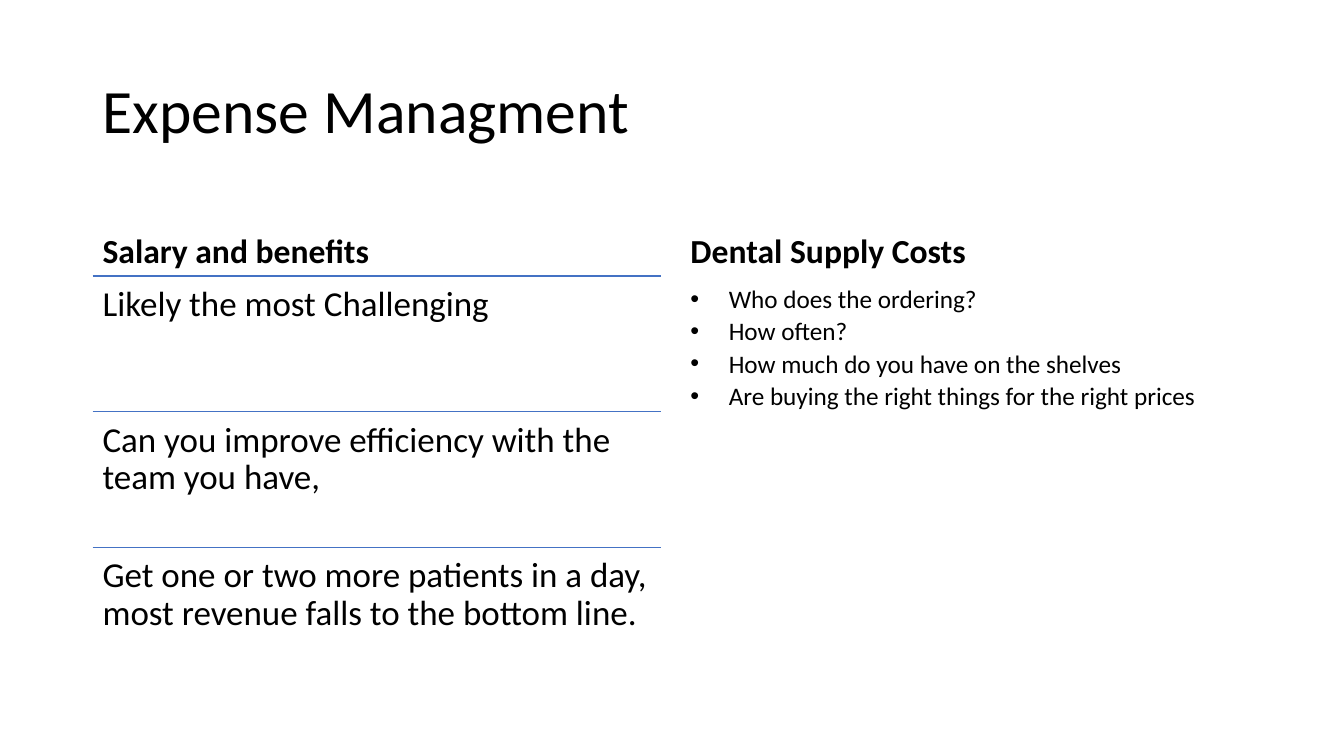
"""Build the expense management slide."""
from dataclasses import dataclass

from lxml.etree import SubElement
from pptx import Presentation
from pptx.dml.color import RGBColor
from pptx.enum.shapes import MSO_CONNECTOR
from pptx.enum.text import MSO_ANCHOR, MSO_AUTO_SIZE, PP_ALIGN
from pptx.oxml.ns import qn
from pptx.util import Inches, Pt


@dataclass(frozen=True)
class Theme:
    """Colours, font and type sizes."""
    ink: RGBColor = RGBColor(0x00, 0x00, 0x00)
    rule: RGBColor = RGBColor(0x44, 0x72, 0xC4)
    font: str = "Calibri"
    title: int = 44
    heading: int = 24
    step: int = 25
    question: int = 18


class SlideBuilder:
    """Draws on one slide, with lengths in percent of its size."""

    def __init__(self, deck, theme):
        """Add a title-only slide to the deck."""
        self.width, self.height = deck.slide_width, deck.slide_height
        self.theme = theme
        self.slide = deck.slides.add_slide(deck.slide_layouts[5])

    def across(self, share):
        """Convert a share of the width to a length."""
        return round(self.width * share / 100)

    def down(self, share):
        """Convert a share of the height to a length."""
        return round(self.height * share / 100)

    def box(self, left, top, width, height):
        """Convert four shares to a position and size."""
        return self.across(left), self.down(top), self.across(width), self.down(height)

    def fill_text(self, frame, lines, size, bold=False, spacing=0.9,
                  anchor=MSO_ANCHOR.TOP, inset=0.05):
        """Fill a text frame with paragraphs of one format."""
        frame_format = {
            "word_wrap": True, "auto_size": MSO_AUTO_SIZE.NONE, "vertical_anchor": anchor,
            "margin_left": Inches(0.1), "margin_right": Inches(0.1),
            "margin_top": Inches(inset), "margin_bottom": Inches(inset),
        }
        for name, value in frame_format.items():
            setattr(frame, name, value)
        frame.text = "\n".join(lines)
        font_format = {"name": self.theme.font, "size": Pt(size), "bold": bold}
        for paragraph in frame.paragraphs:
            paragraph.alignment = PP_ALIGN.LEFT
            paragraph.line_spacing = spacing
            for run in paragraph.runs:
                for name, value in font_format.items():
                    setattr(run.font, name, value)
                run.font.color.rgb = self.theme.ink

    def title(self, wording, *area):
        """Place and fill the title placeholder."""
        heading = self.slide.shapes.title
        for name, value in zip(("left", "top", "width", "height"), self.box(*area)):
            setattr(heading, name, value)
        self.fill_text(heading.text_frame, [wording], self.theme.title,
                       anchor=MSO_ANCHOR.MIDDLE)

    def text(self, lines, area, size, **style):
        """Add a text box and return its frame."""
        frame = self.slide.shapes.add_textbox(*self.box(*area)).text_frame
        self.fill_text(frame, lines, size, **style)
        return frame

    def bullets(self, lines, area):
        """Add a bulleted list with hanging indents."""
        frame = self.text(lines, area, self.theme.question, spacing=1.07)
        hang = Inches(0.38)
        for paragraph in frame.paragraphs:
            properties = paragraph._p.get_or_add_pPr()
            properties.set("marL", str(hang))
            properties.set("indent", str(-hang))
            SubElement(properties, qn("a:buFont")).set("typeface", "Arial")
            SubElement(properties, qn("a:buChar")).set("char", "•")

    def rule(self, left, top, width):
        """Add a thin horizontal line."""
        start, level = self.across(left), self.down(top)
        line = self.slide.shapes.add_connector(
            MSO_CONNECTOR.STRAIGHT, start, level, start + self.across(width), level)
        line.line.color.rgb = self.theme.rule
        line.line.width = Pt(1)
        SubElement(line._element.spPr, qn("a:effectLst"))


def main():
    """Build and save the slide."""
    deck = Presentation()
    deck.slide_width, deck.slide_height = Inches(13.33), Inches(7.5)
    theme = Theme()
    page = SlideBuilder(deck, theme)

    salary_left, salary_width = 6.9, 42.3
    supply_left, supply_width = 50.64, 42.5
    heading_top, heading_height = 24.53, 12
    body_top, body_height = heading_top + heading_height, 53.8

    page.title("Expense Managment", salary_left, 5.33, 86.27, 19.33)
    headings = (
        ("Salary and benefits", salary_left, salary_width),
        ("Dental Supply Costs", supply_left, supply_width),
    )
    for heading, left, width in headings:
        page.text([heading], (left, heading_top, width, heading_height),
                  theme.heading, bold=True, anchor=MSO_ANCHOR.BOTTOM)

    steps = (
        "Likely the most Challenging",
        "Can you improve efficiency with the team you have,",
        "Get one or two more patients in a day, most revenue falls to the bottom line.",
    )
    step_height = body_height / len(steps)
    for index, step in enumerate(steps):
        step_top = body_top + index * step_height
        page.rule(salary_left, step_top, salary_width)
        page.text([step], (salary_left, step_top, salary_width, step_height),
                  theme.step, inset=0.1)

    questions = (
        "Who does the ordering?",
        "How often?",
        "How much do you have on the shelves",
        "Are buying the right things for the right prices",
    )
    page.bullets(questions, (supply_left, body_top, supply_width, body_height))
    deck.save("out.pptx")


if __name__ == "__main__":
    main()
